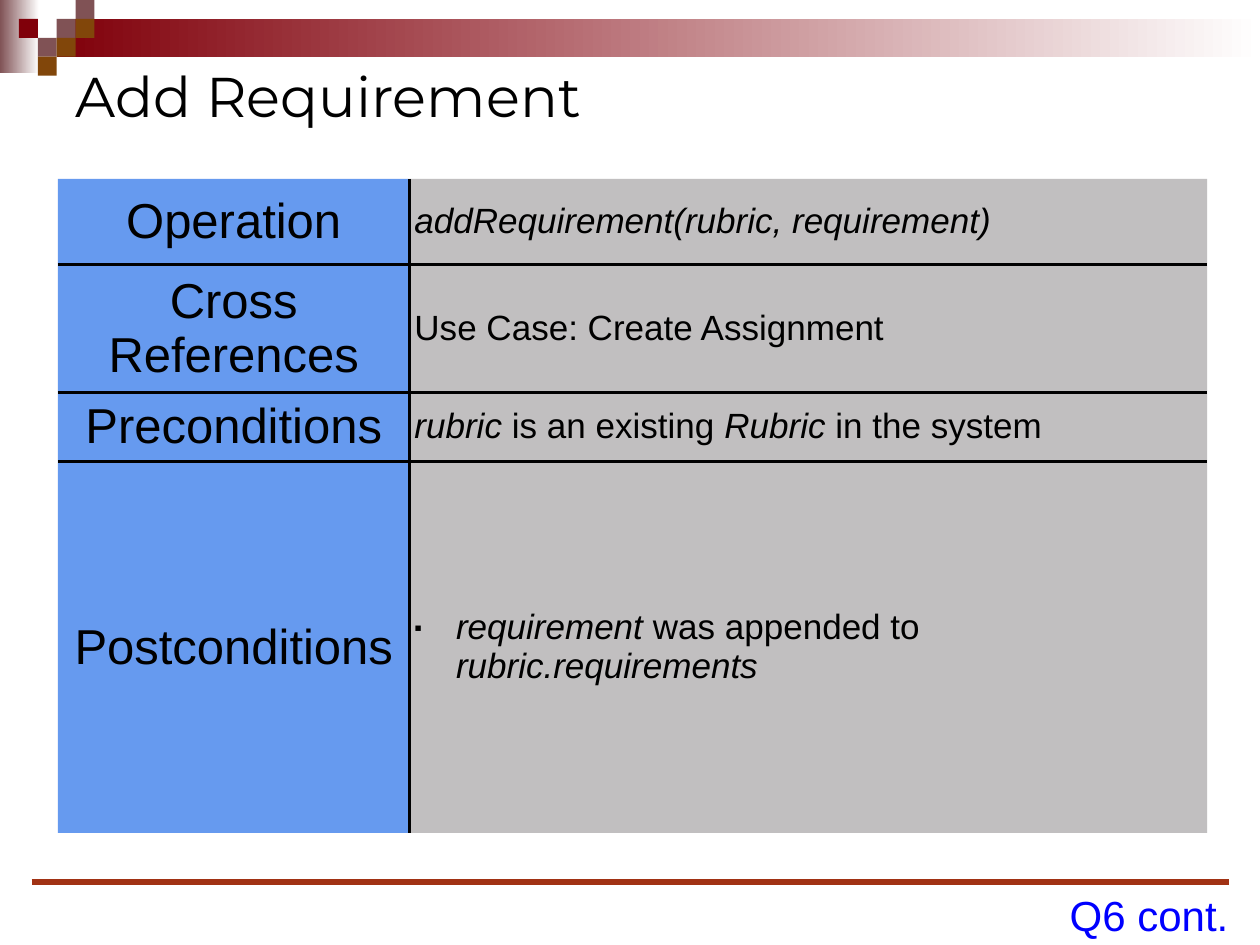
import pptx
import pptx.util
import pptx.dml.color
import pptx.enum.shapes
import pptx.enum.text
import pptx.oxml
import pptx.oxml.ns

Inches, Pt = pptx.util.Inches, pptx.util.Pt
ALIGN, ANCHOR = pptx.enum.text.PP_ALIGN, pptx.enum.text.MSO_ANCHOR
RECT = pptx.enum.shapes.MSO_SHAPE.RECTANGLE
STRAIGHT = pptx.enum.shapes.MSO_CONNECTOR.STRAIGHT

TITLE = "Add Requirement"
NOTE = "Q6 cont."
CONTRACT = [
    ("Operation", [("addRequirement(rubric, requirement)", True)], 0.68),
    ("Cross References", [("Use Case: Create Assignment", False)], 1.01),
    ("Preconditions", [("rubric", True), (" is an existing ", False),
                       ("Rubric", True), (" in the system", False)], 0.54),
    ("Postconditions", [("requirement", True), (" was appended to ", False),
                        ("rubric.requirements", True)], 2.95),
]
BULLETED = {"Postconditions"}
COLUMNS = [2.79, 6.33]
CELL_FILLS = [("0057E5", 60), ("544E51", 36)]

MAROON, MAUVE, BROWN, BLACK = "80000A", "805255", "81460A", "000000"
BANDS = [((0, 0, 0.31, 0.58), MAUVE), ((0.45, 0.15, 9.55, 0.3), MAROON)]
TILE = 0.15
TILES = [(3, 1, MAUVE), (4, 0, MAUVE), (4, 1, BROWN), (2, 2, MAUVE),
         (1, 1, MAROON), (3, 2, BROWN), (2, 3, BROWN)]


def rgb(color):
    return pptx.dml.color.RGBColor.from_string(color)


def xml(tag, body="", attrs=""):
    return pptx.oxml.parse_xml(
        f"<a:{tag} {pptx.oxml.ns.nsdecls('a')} {attrs}>{body}</a:{tag}>")


def style(font, size, color, name="Arial", italic=False):
    font.size, font.name, font.italic = Pt(size), name, italic
    font.color.rgb = rgb(color)


def add_rect(slide, box, color, fade=False):
    sp = slide.shapes.add_shape(RECT, *map(Inches, box))
    sp.shadow.inherit = False
    sp.line.fill.background()
    if fade:
        sp.fill.gradient()
        sp.fill.gradient_angle = 0
        for stop, c, pos in zip(sp.fill.gradient_stops, (color, "FFFFFF"), (0, 1)):
            stop.color.rgb = rgb(c)
            stop.position = pos
    else:
        sp.fill.solid()
        sp.fill.fore_color.rgb = rgb(color)


def format_cell(cell, fill, alpha, ruled_sides):
    cell.fill.solid()
    cell.fill.fore_color.rgb = rgb(fill)
    cell.margin_left = cell.margin_right = Inches(0.04)
    cell.margin_top = cell.margin_bottom = Inches(0.04)
    cell.vertical_anchor = ANCHOR.MIDDLE
    pr = cell._tc.get_or_add_tcPr()
    pr.find(".//" + pptx.oxml.ns.qn("a:srgbClr")).append(
        xml("alpha", attrs=f'val="{alpha * 1000}"'))
    for i, side in enumerate("LRTB"):
        paint = (f'<a:solidFill><a:srgbClr val="{BLACK}"/></a:solidFill>'
                 if side in ruled_sides else "<a:noFill/>")
        pr.insert(i, xml("ln" + side, paint, f'w="{Pt(2)}"'))


def add_contract(slide):
    last = len(CONTRACT) - 1
    frame = slide.shapes.add_table(
        len(CONTRACT), 2, Inches(0.46), Inches(1.42),
        Inches(sum(COLUMNS)), Inches(sum(row[2] for row in CONTRACT)))
    table = frame.table
    table.first_row = table.horz_banding = False
    for column, width in zip(table.columns, COLUMNS):
        column.width = Inches(width)
    for i, (label, runs, height) in enumerate(CONTRACT):
        table.rows[i].height = Inches(height)
        across = ("T" if i else "") + ("B" if i < last else "")
        for j, (fill, alpha) in enumerate(CELL_FILLS):
            format_cell(table.cell(i, j), fill, alpha, across + "RL"[j])
        p = table.cell(i, 0).text_frame.paragraphs[0]
        p.text = label
        p.alignment = ALIGN.CENTER
        style(p.runs[0].font, 28, BLACK)
        p = table.cell(i, 1).text_frame.paragraphs[0]
        if label in BULLETED:
            pr = p._p.get_or_add_pPr()
            pr.set("marL", str(Inches(0.33)))
            pr.set("indent", str(-Inches(0.33)))
            pr.append(xml("buSzPct", attrs='val="62000"'))
            pr.append(xml("buFont", attrs='typeface="Arial"'))
            pr.append(xml("buChar", attrs='char="▪"'))
        for text, italic in runs:
            r = p.add_run()
            r.text = text
            style(r.font, 20, BLACK, italic=italic)


def main():
    prs = pptx.Presentation()
    prs.slide_width, prs.slide_height = Inches(10), Inches(7.5)
    slide = prs.slides.add_slide(prs.slide_layouts[5])

    for box, color in BANDS:
        add_rect(slide, box, color, fade=True)
    for col, row, color in TILES:
        add_rect(slide, (col * TILE, row * TILE, TILE, TILE), color)

    rule = slide.shapes.add_connector(
        STRAIGHT, Inches(0.25), Inches(7), Inches(9.75), Inches(7))
    rule.line.color.rgb = rgb("A13214")
    rule.line.width = Pt(3)
    rule._element.spPr.append(xml("effectLst"))

    title = slide.shapes.title
    title.left, title.top = Inches(0.5), Inches(0.42)
    title.width, title.height = Inches(9), Inches(0.67)
    tf = title.text_frame
    tf.text = TITLE
    tf.vertical_anchor = ANCHOR.MIDDLE
    tf.paragraphs[0].alignment = ALIGN.LEFT
    style(tf.paragraphs[0].runs[0].font, 32, BLACK, "Montserrat")

    note = slide.shapes.add_textbox(
        Inches(8.48), Inches(7.06), Inches(1.27), Inches(0.4))
    tf = note.text_frame
    tf.margin_left = tf.margin_right = tf.margin_top = tf.margin_bottom = 0
    tf.word_wrap = False
    tf.auto_size = pptx.enum.text.MSO_AUTO_SIZE.SHAPE_TO_FIT_TEXT
    tf.vertical_anchor = ANCHOR.MIDDLE
    tf.text = NOTE
    tf.paragraphs[0].alignment = ALIGN.RIGHT
    style(tf.paragraphs[0].runs[0].font, 24, "0000FF")

    add_contract(slide)
    prs.save("out.pptx")


if __name__ == "__main__":
    main()
